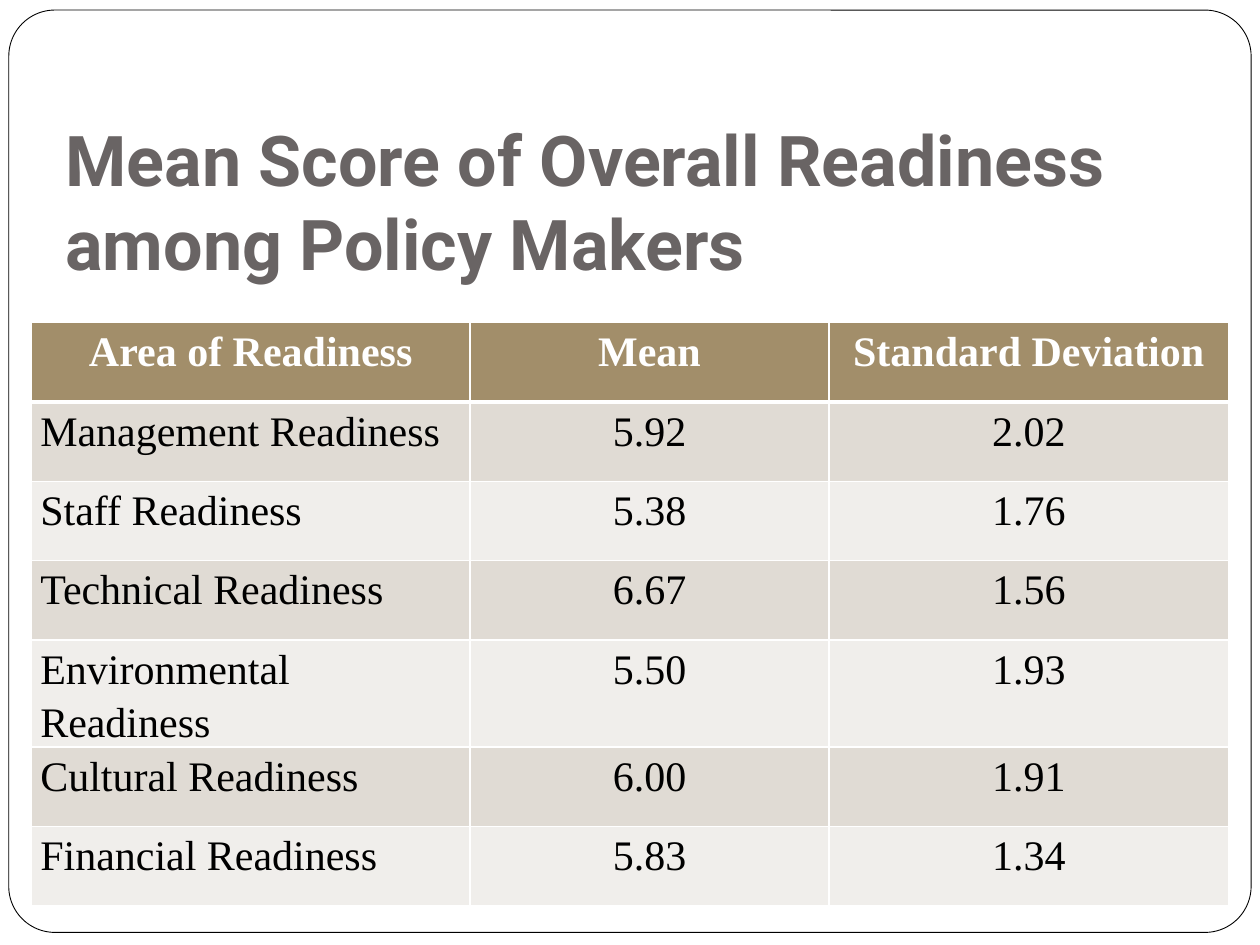
from pptx import Presentation
from pptx import util as u
from pptx.dml.color import RGBColor
from pptx.enum import shapes, text
from pptx.oxml import parse_xml
from pptx.oxml.ns import nsdecls

WHITE = RGBColor(0xFF, 0xFF, 0xFF)
BLACK = RGBColor(0, 0, 0)
GREY = RGBColor(0x69, 0x64, 0x64)
BROWN = RGBColor(0xA2, 0x8E, 0x6A)
BANDS = (RGBColor(0xF0, 0xEE, 0xEB), RGBColor(0xE0, 0xDB, 0xD4))

TITLE_FONT = {"name": "Roboto", "size": u.Pt(40), "bold": True}
HEAD_FONT = {"name": "Times New Roman", "size": u.Pt(24), "bold": True}
BODY_FONT = {**HEAD_FONT, "bold": False}

COLUMNS = (3.48, 2.85, 3.17)
ROW_HEIGHT, TALL_HEIGHT = 0.63, 0.85
ROWS = [
    ("Area of Readiness", "Mean", "Standard Deviation"),
    ("Management Readiness", "5.92", "2.02"),
    ("Staff Readiness", "5.38", "1.76"),
    ("Technical Readiness", "6.67", "1.56"),
    ("Environmental Readiness", "5.50", "1.93"),
    ("Cultural Readiness", "6.00", "1.91"),
    ("Financial Readiness", "5.83", "1.34"),
]


def set_attrs(obj, values):
    for name, value in values.items():
        setattr(obj, name, value)


def format_run(r, font, color):
    set_attrs(r.font, font)
    r.font.color.rgb = color


def add_frame(s):
    sp = s.shapes.add_shape(shapes.MSO_SHAPE.ROUNDED_RECTANGLE, u.Inches(0.07),
                            u.Inches(0.08), u.Inches(9.86), u.Inches(7.32))
    sp.adjustments[0] = 0.05
    sp.shadow.inherit = False
    sp.fill.solid()
    sp.fill.fore_color.rgb = WHITE
    sp.line.color.rgb = BLACK
    sp.line.width = u.Pt(0.5)
    # Send behind the title
    s.shapes._spTree.insert(2, sp._element)


def set_title(s, wording):
    sp = s.shapes.title
    set_attrs(sp, {"left": u.Inches(0.42), "top": u.Inches(0.33),
                   "width": u.Inches(9.58), "height": u.Inches(2.03)})
    tf = sp.text_frame
    set_attrs(tf, {"word_wrap": True, "auto_size": text.MSO_AUTO_SIZE.NONE,
                   "vertical_anchor": text.MSO_ANCHOR.BOTTOM,
                   "margin_left": u.Inches(0.1), "margin_right": u.Inches(0.1),
                   "margin_top": u.Inches(0.05), "margin_bottom": u.Inches(0.1)})
    p = tf.paragraphs[0]
    p.alignment = text.PP_ALIGN.LEFT
    p.line_spacing = 1.0
    r = p.add_run()
    r.text = wording
    format_run(r, TITLE_FONT, GREY)


def set_borders(cell, widths):
    tc_pr = cell._tc.get_or_add_tcPr()
    for i, (side, width) in enumerate(widths.items()):
        tc_pr.insert(i, parse_xml(
            f'<a:ln{side} {nsdecls("a")} w="{u.Pt(width)}"><a:solidFill>'
            f'<a:srgbClr val="{WHITE}"/></a:solidFill></a:ln{side}>'))


def fill_cell(cell, wording, row, col):
    header = row == 0
    set_attrs(cell, {"margin_left": u.Inches(0.07), "margin_right": u.Inches(0.07),
                     "margin_top": 0, "margin_bottom": 0})
    cell.fill.solid()
    cell.fill.fore_color.rgb = BROWN if header else BANDS[row % 2]
    p = cell.text_frame.paragraphs[0]
    centred = header or col > 0
    p.alignment = text.PP_ALIGN.CENTER if centred else text.PP_ALIGN.LEFT
    p.line_spacing = 1.15
    r = p.add_run()
    r.text = wording
    format_run(r, HEAD_FONT if header else BODY_FONT, WHITE if header else BLACK)
    # A thick rule separates the header from the body
    set_borders(cell, {"L": 1, "R": 1, "T": 3 if row == 1 else 1,
                       "B": 3 if header else 1})


def add_score_table(s):
    heights = [TALL_HEIGHT if row[0].startswith("Environmental") else ROW_HEIGHT
               for row in ROWS]
    table = s.shapes.add_table(len(ROWS), len(COLUMNS), u.Inches(0.25), u.Inches(2.56),
                               u.Inches(sum(COLUMNS)), u.Inches(sum(heights))).table
    for column, width in zip(table.columns, COLUMNS):
        column.width = u.Inches(width)
    for i, (height, row) in enumerate(zip(heights, ROWS)):
        table.rows[i].height = u.Inches(height)
        for j, wording in enumerate(row):
            fill_cell(table.cell(i, j), wording, i, j)


def main():
    prs = Presentation()
    prs.slide_width, prs.slide_height = u.Inches(10), u.Inches(7.5)
    s = prs.slides.add_slide(prs.slide_layouts[5])  # Title Only
    add_frame(s)
    set_title(s, "Mean Score of Overall Readiness among Policy Makers")
    add_score_table(s)
    prs.save("out.pptx")


if __name__ == "__main__":
    main()
